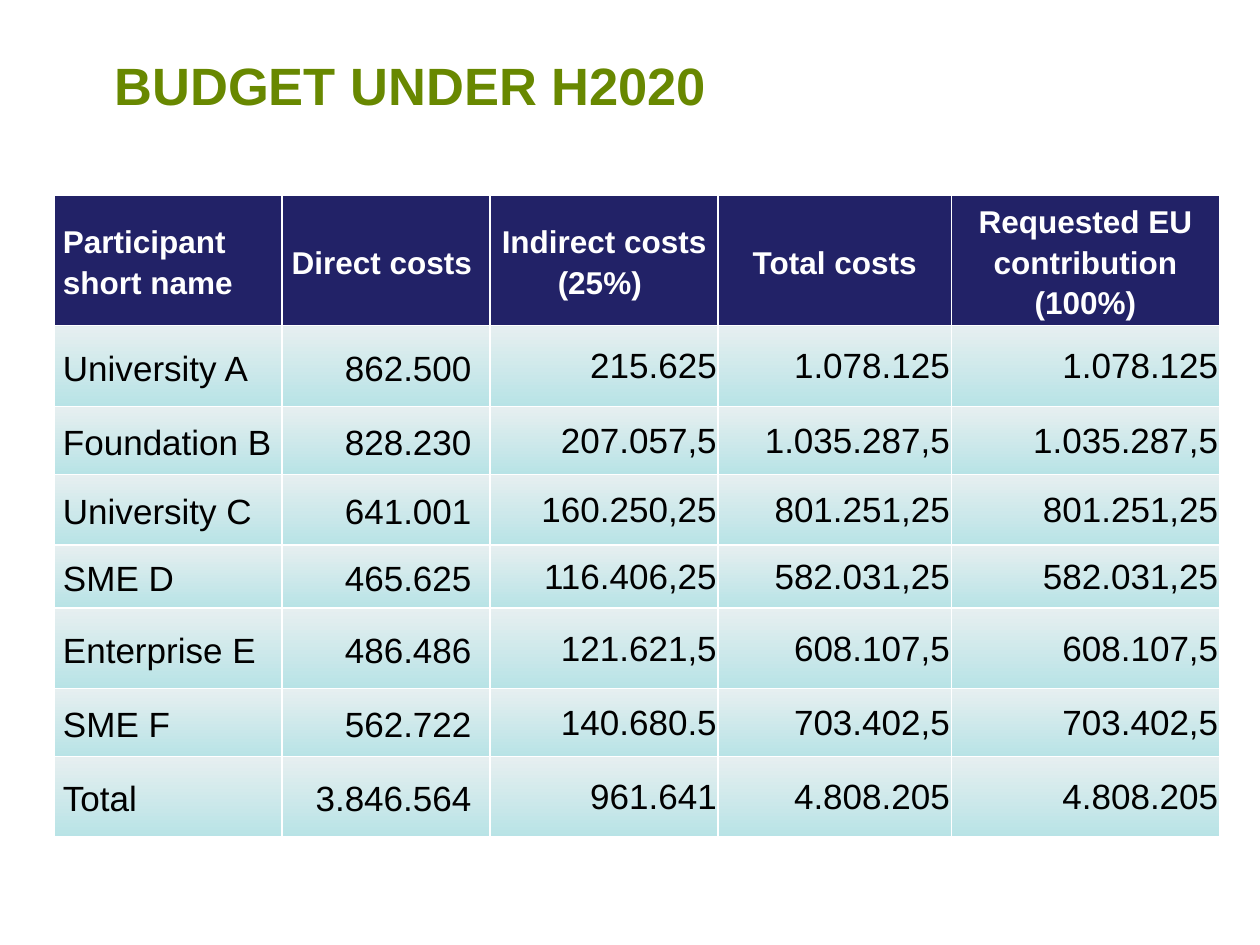
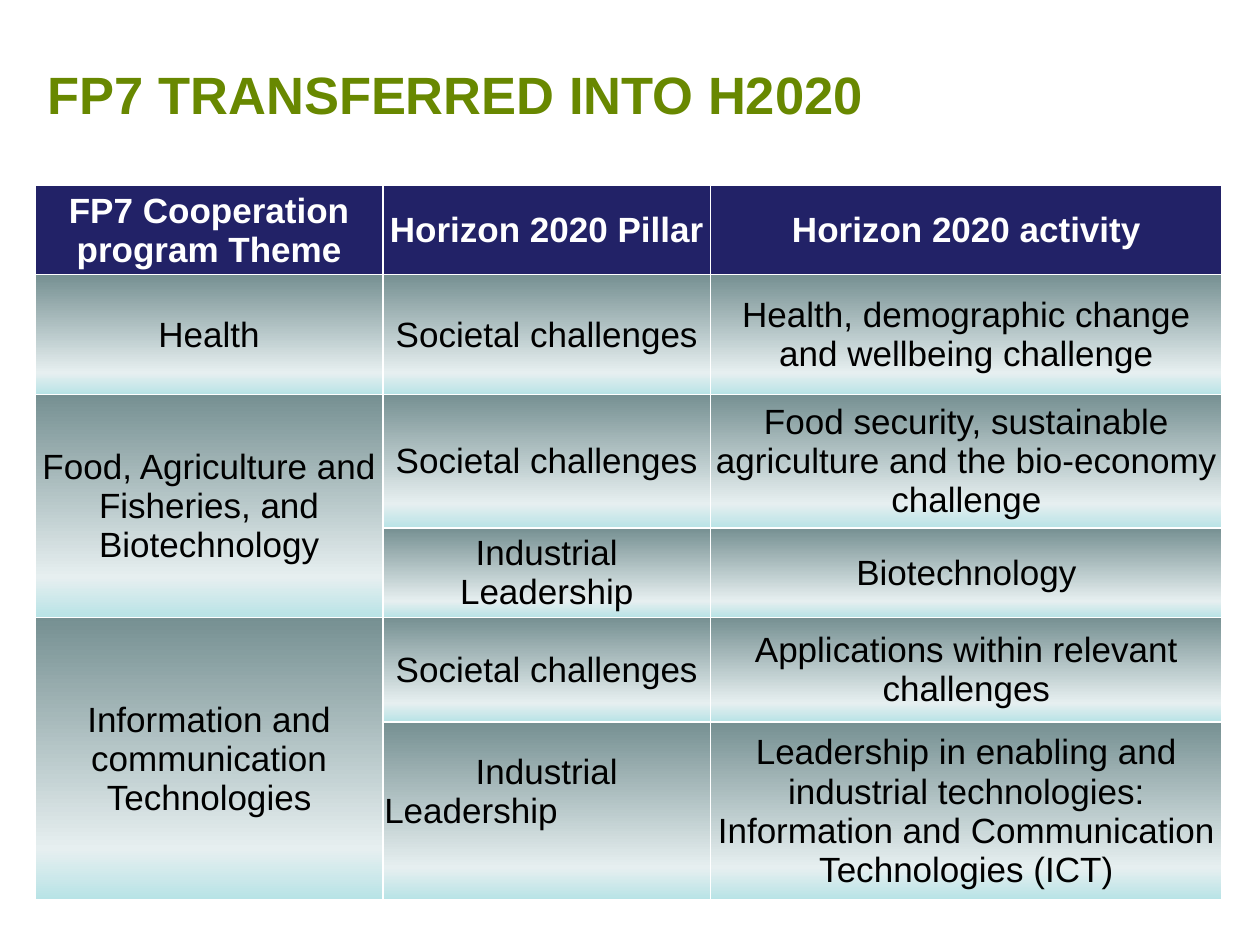
from lxml import etree
from pptx import Presentation
from pptx import util as u
from pptx.dml.color import RGBColor
from pptx.enum import text
from pptx.oxml.ns import qn

FONT = "Arial"
COLORS = {
    "title": "688800",
    "header": "222267",
    "header_text": "FFFFFF",
    "body_text": "000000",
    "border": "FFFFFF",
    "dark": "769092",
    "pale": "E6EFF0",
    "aqua": "B8E3E6",
}
LEFT, CENTER, RIGHT = text.PP_ALIGN.LEFT, text.PP_ALIGN.CENTER, text.PP_ALIGN.RIGHT
WIDE_INSETS = (0.07, 0, 0.07, 0)
TIGHT_INSETS = (0.01, 0.01, 0.01, 0)

BUDGET = [
    ["Participant short name", "Direct costs ", "Indirect costs (25%) ", " Total costs ",
     "Requested EU contribution (100%)"],
    ["University A", "862.500 ", "215.625", "1.078.125", "1.078.125"],
    ["Foundation B", "828.230 ", "207.057,5", "1.035.287,5", "1.035.287,5"],
    ["University C", "641.001 ", "160.250,25", "801.251,25", "801.251,25"],
    ["SME D", "465.625 ", "116.406,25", "582.031,25", "582.031,25"],
    ["Enterprise E", "486.486 ", "121.621,5", "608.107,5", "608.107,5"],
    ["SME F", "562.722 ", "140.680.5", "703.402,5", "703.402,5"],
    ["Total", "3.846.564 ", "961.641", "4.808.205", "4.808.205"],
]
THEMES = [
    ["FP7 Cooperation program Theme", "Horizon 2020 Pillar", "Horizon 2020 activity"],
    ["Health", "Societal challenges", "Health, demographic change and wellbeing challenge"],
    ["Food, Agriculture and Fisheries, and Biotechnology", "Societal challenges",
     "Food security, sustainable agriculture and the bio-economy challenge"],
    [None, "Industrial Leadership", "Biotechnology"],
    ["Information and communication Technologies", "Societal challenges",
     "Applications within relevant challenges"],
    [None, "Industrial\nLeadership",
     "Leadership in enabling and industrial technologies: "
     "Information and Communication Technologies (ICT)"],
]


def color(name):
    return RGBColor.from_string(COLORS[name])


def set_font(para, size, color_name, bold):
    para.font.name = FONT
    para.font.size = u.Pt(size)
    para.font.bold = bold
    para.font.color.rgb = color(color_name)


def set_insets(target, insets):
    for side, inset in zip(("left", "top", "right", "bottom"), insets):
        setattr(target, f"margin_{side}", u.Inches(inset))


def add_color(parent, name):
    etree.SubElement(parent, qn("a:srgbClr"), val=COLORS[name])


def add_borders(cell):
    properties = cell._tc.get_or_add_tcPr()
    for side in ("lnL", "lnR", "lnT", "lnB"):
        line = etree.SubElement(properties, qn(f"a:{side}"), w=str(u.Pt(1)))
        add_color(etree.SubElement(line, qn("a:solidFill")), "border")


def fill_gradient(cell, middle):
    gradient = etree.SubElement(cell._tc.get_or_add_tcPr(), qn("a:gradFill"), rotWithShape="1")
    stops = etree.SubElement(gradient, qn("a:gsLst"))
    for position, name in ((0, "dark"), (middle, "pale"), (100, "aqua")):
        add_color(etree.SubElement(stops, qn("a:gs"), pos=str(position * 1000)), name)
    etree.SubElement(gradient, qn("a:lin"), ang="5400000", scaled="0")


def add_title(page, box, wording, top_inset=0.05):
    frame = page.shapes.add_textbox(*map(u.Inches, box)).text_frame
    frame.word_wrap = True
    frame.vertical_anchor = text.MSO_ANCHOR.MIDDLE
    set_insets(frame, (0.1, top_inset, 0.1, 0.05))
    para = frame.paragraphs[0]
    para.text = wording
    set_font(para, 30, "title", True)


def add_grid(page, left, top, widths, heights, rows, middle, header_size, layout):
    shape = page.shapes.add_table(
        len(rows), len(widths), u.Inches(left), u.Inches(top),
        u.Inches(sum(widths)), u.Inches(sum(heights)))
    table = shape.table
    table.first_row = table.horz_banding = False
    for column, width in zip(table.columns, widths):
        column.width = u.Inches(width)
    for row, height in zip(table.rows, heights):
        row.height = u.Inches(height)
    for r, row in enumerate(rows):
        for c, wording in enumerate(row):
            cell = table.cell(r, c)
            header = r == 0
            align, insets, spacing = layout(r, c)
            cell.vertical_anchor = text.MSO_ANCHOR.MIDDLE
            set_insets(cell, insets)
            add_borders(cell)
            if header:
                cell.fill.solid()
                cell.fill.fore_color.rgb = color("header")
            else:
                fill_gradient(cell, middle)
            cell.text_frame.text = wording or ""
            for para in cell.text_frame.paragraphs:
                para.alignment = align
                para.line_spacing = spacing
                set_font(para, header_size if header else 20,
                         "header_text" if header else "body_text", header)
            if wording is None:
                table.cell(r - 1, c).merge(cell)
    return table


def budget_layout(r, c):
    if r and c > 1:
        return RIGHT, TIGHT_INSETS, 1.0
    align = LEFT if c == 0 else RIGHT if r else CENTER
    return align, WIDE_INSETS, 1.15


def theme_layout(r, c):
    return CENTER, TIGHT_INSETS, 1.0


def build_budget(page):
    add_title(page, (0.81, 0.36, 4.98, 0.63), "BUDGET UNDER H2020")
    add_grid(page, 0.43, 1.55, [1.81, 1.65, 1.81, 1.85, 2.13],
             [0.97, 0.64, 0.54, 0.56, 0.5, 0.64, 0.54, 0.64],
             BUDGET, 1, 18, budget_layout)


def build_themes(page):
    add_title(page, (0.28, 0.22, 7.87, 0.9), "FP7 TRANSFERRED INTO H2020", 0.2)
    table = add_grid(page, 0.28, 1.47, [2.76, 2.6, 4.06],
                     [0.71, 0.95, 1.06, 0.71, 0.83, 1.41],
                     THEMES, 82, 20, theme_layout)
    last_pillar = table.cell(5, 1)
    last_pillar.margin_bottom = u.Inches(0.31)
    last_pillar.text_frame.paragraphs[1].alignment = LEFT


def main():
    deck = Presentation()
    deck.slide_width, deck.slide_height = u.Inches(10), u.Inches(7.5)
    for build in (build_budget, build_themes):
        build(deck.slides.add_slide(deck.slide_layouts[6]))
    deck.save("out.pptx")


if __name__ == "__main__":
    main()
